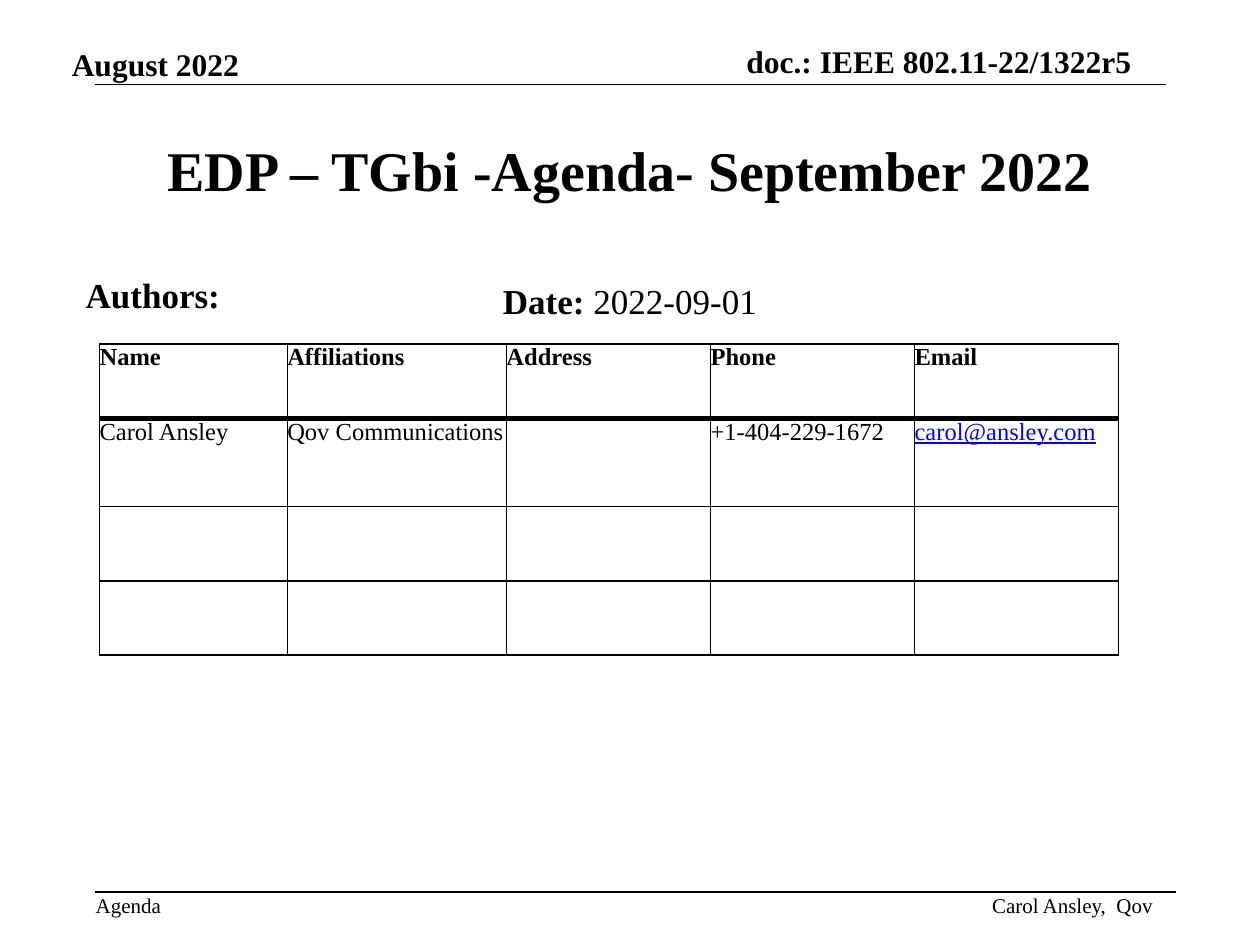
from pptx import Presentation
from pptx.dml.color import RGBColor
from pptx.enum.shapes import MSO_CONNECTOR
from pptx.enum.text import MSO_ANCHOR, MSO_AUTO_SIZE, PP_ALIGN
from pptx.oxml.ns import qn
from pptx.util import Inches, Pt
from lxml import etree

LEFT, MID, RIGHT = PP_ALIGN.LEFT, PP_ALIGN.CENTER, PP_ALIGN.RIGHT
TOP, CENTER, BOTTOM = MSO_ANCHOR.TOP, MSO_ANCHOR.MIDDLE, MSO_ANCHOR.BOTTOM
GROW = MSO_AUTO_SIZE.SHAPE_TO_FIT_TEXT
STRAIGHT = MSO_CONNECTOR.STRAIGHT

COLS, ROWS = 100, 75  # grid over the whole slide
COLORS = {"ink": "000000", "paper": "FFFFFF", "link": "0000FF"}


class Page:
    font = "Times New Roman"
    thin, thick = 0.96, 3

    def __init__(self, deck):
        self.slide = deck.slides.add_slide(deck.slide_layouts[6])
        self.shapes = self.slide.shapes
        self.col = deck.slide_width / COLS
        self.row = deck.slide_height / ROWS
        back = self.slide.background.fill
        back.solid()
        back.fore_color.rgb = self.color("paper")

    def color(self, name):
        return RGBColor.from_string(COLORS[name])

    def place(self, x, y, w, h):
        return [int(n * unit) for n, unit in
                zip((x, y, w, h), (self.col, self.row) * 2)]

    def run(self, para, text, size, bold=False, color="ink", under=None):
        run = para.add_run()
        run.text = text
        font = run.font
        font.name, font.size, font.bold = self.font, Pt(size), bold
        font.underline = under
        font.color.rgb = self.color(color)

    def text(self, box, runs, size, align=LEFT, anchor=TOP, pad=0,
             wrap=False, hang=0):
        frame = self.shapes.add_textbox(*self.place(*box)).text_frame
        frame.word_wrap, frame.auto_size = wrap, GROW
        frame.vertical_anchor = anchor
        frame.margin_left = frame.margin_right = Inches(pad)
        frame.margin_top = frame.margin_bottom = Inches(pad)
        para = frame.paragraphs[0]
        para.alignment = align
        if hang:
            para.space_before = Pt(4)
            props = para._p.get_or_add_pPr()
            props.set("marL", str(Inches(hang)))
            props.set("indent", str(-Inches(hang)))
        for text, bold in runs:
            self.run(para, text, size, bold)

    def rule(self, x, y, w):
        left, top, width, _ = self.place(x, y, w, 0)
        line = self.shapes.add_connector(STRAIGHT, left, top, left + width, top)
        line.line.color.rgb = self.color("ink")
        line.line.width = Pt(1)
        etree.SubElement(line._element.spPr, qn("a:effectLst"))

    def border(self, cell, sides):
        props = cell._tc.get_or_add_tcPr()
        for spot, (side, width) in enumerate(sides.items()):
            line = etree.Element(qn("a:ln" + side), w=str(Pt(width)))
            fill = etree.SubElement(line, qn("a:solidFill"))
            etree.SubElement(fill, qn("a:srgbClr"), val=COLORS["ink"])
            props.insert(spot, line)  # borders come before the fill

    def table(self, x, y, widths, heights, data, size):
        box = self.place(x, y, sum(widths), sum(heights))
        grid = self.shapes.add_table(len(heights), len(widths), *box).table
        for part, width in zip(grid.columns, widths):
            part.width = int(width * self.col)
        for r, height in enumerate(heights):
            grid.rows[r].height = int(height * self.row)
            for c in range(len(widths)):
                cell = grid.cell(r, c)
                cell.margin_left = cell.margin_right = 0
                cell.margin_top = cell.margin_bottom = 0
                cell.fill.background()
                self.border(cell, {
                    "L": self.thin, "R": self.thin,
                    "T": self.thick if r == 1 else self.thin,
                    "B": self.thick if r == 0 else self.thin})
                text = data[r][c] if r < len(data) else ""
                if text:
                    mail = "@" in text
                    self.run(cell.text_frame.paragraphs[0], text, size, r == 0,
                             "link" if mail else "ink", mail or None)


def main():
    deck = Presentation()
    deck.slide_width, deck.slide_height = Inches(10), Inches(7.5)
    page = Page(deck)

    # Header
    page.text((5.7, 3.6, 13.4, 3), [("August 2022", True)], 18, anchor=BOTTOM)
    page.text((58.8, 3.3, 31, 3), [("doc.: IEEE 802.11-22/1322r5", True)], 18,
              RIGHT, BOTTOM)
    page.rule(7.5, 6.7, 85)

    # Footer
    page.rule(7.5, 70.8, 85.8)
    page.text((7.6, 70.8, 5.3, 2), [("Agenda", False)], 12)
    page.text((78.5, 70.8, 13, 2), [("Carol Ansley,  Qov", False)], 12,
              RIGHT, BOTTOM)

    # Title, date and authors
    page.text((7.5, 10.2, 85, 6.4),
              [("EDP – TGbi -Agenda- September 2022", True)], 32,
              MID, CENTER, 0.05, True)
    page.text((7.5, 21.7, 85, 4.4), [("Date: ", True), ("2022-09-01", False)],
              20, MID, pad=0.05, wrap=True, hang=0.37)
    page.text((6.3, 21.2, 14.8, 4.1), [("Authors:", True)], 20,
              pad=0.05, wrap=True, hang=0.37)

    # Author table
    people = [
        ("Name", "Affiliations", "Address", "Phone", "Email"),
        ("Carol Ansley", "Qov Communications", "", "+1-404-229-1672",
         "carol@ansley.com"),
    ]
    page.table(7.9, 27.3, [14.9, 17.4] + [16.2] * 3, [5.9, 7, 5.9, 5.9],
               people, 14)

    deck.save("out.pptx")


if __name__ == "__main__":
    main()
